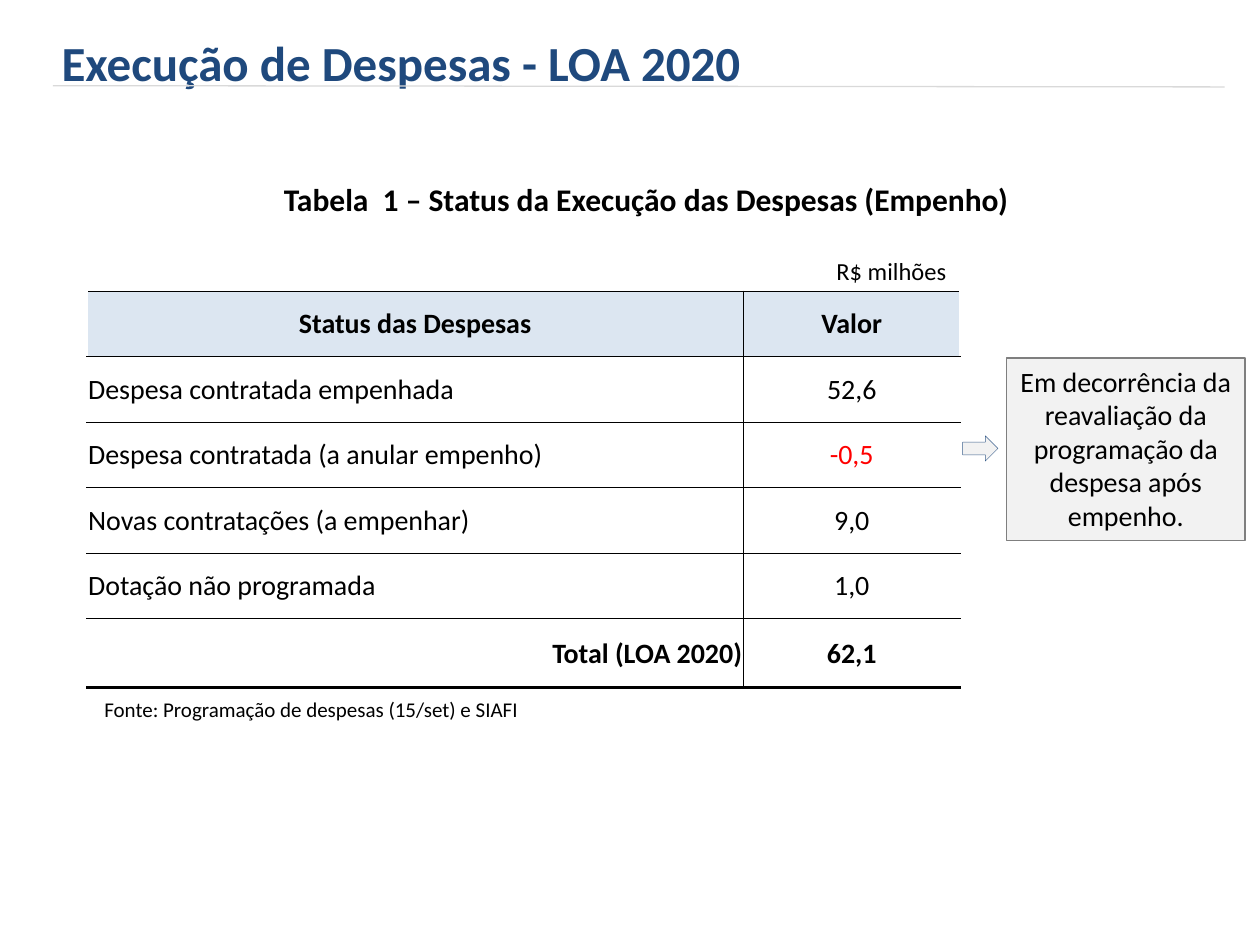
"""Build the slide on the execution of expenses under LOA 2020."""
import pptx
import pptx.dml.color
import pptx.enum.shapes
import pptx.enum.text
import pptx.oxml
import pptx.oxml.ns
import pptx.util
from pptx.util import Inches

COLORS = {
    "title": "1F497D", "text": "000000", "negative": "FF0000",
    "rule": "D9D9D9", "header": "DCE6F1", "body": "FFFFFF",
    "callout": "F2F2F2", "callout_line": "7F7F7F", "arrow_line": "3A5F8C",
}
ALIGN = pptx.enum.text.PP_ALIGN
ANCHOR = pptx.enum.text.MSO_ANCHOR
SHAPE = pptx.enum.shapes.MSO_SHAPE
ROWS = [
    ("Status das Despesas", "Valor"),
    ("Despesa contratada empenhada", "52,6"),
    ("Despesa contratada (a anular empenho)", "-0,5"),
    ("Novas contratações (a empenhar)", "9,0"),
    ("Dotação não programada", "1,0"),
    ("Total (LOA 2020)", "62,1"),
]


def rgb(name):
    return pptx.dml.color.RGBColor.from_string(COLORS[name])


def write(tf, text, size=16, color="text", bold=False, align=ALIGN.LEFT):
    p = tf.paragraphs[0]
    p.alignment = align
    r = p.add_run()
    r.text = text
    r.font.name = "Calibri"
    r.font.size = pptx.util.Pt(size)
    r.font.bold = bold
    r.font.color.rgb = rgb(color)


def add_text(s, box, text, **fmt):
    tf = s.shapes.add_textbox(*map(Inches, box)).text_frame
    tf.word_wrap = True
    write(tf, text, **fmt)


def add_box(s, kind, box, line, width):
    sp = s.shapes.add_shape(kind, *map(Inches, box))
    sp.shadow.inherit = False
    sp.fill.solid()
    sp.fill.fore_color.rgb = rgb("callout")
    sp.line.color.rgb = rgb(line)
    sp.line.width = pptx.util.Pt(width)
    return sp


def add_rule(s, x1, y1, x2, y2):
    kind = pptx.enum.shapes.MSO_CONNECTOR.STRAIGHT
    cx = s.shapes.add_connector(kind, *map(Inches, (x1, y1, x2, y2)))
    cx.line.color.rgb = rgb("rule")
    cx.line.width = pptx.util.Pt(0.75)
    effects = pptx.oxml.parse_xml(f"<a:effectLst {pptx.oxml.ns.nsdecls('a')}/>")
    cx._element.spPr.append(effects)


def set_border(cell, side, width):
    xml = (f'<a:ln{side} {pptx.oxml.ns.nsdecls("a")} w="{pptx.util.Pt(width)}">'
           f'<a:solidFill><a:srgbClr val="{COLORS["text"]}"/></a:solidFill></a:ln{side}>')
    cell._tc.get_or_add_tcPr().append(pptx.oxml.parse_xml(xml))


def format_cell(cell, fill, borders):
    cell.vertical_anchor = ANCHOR.MIDDLE
    cell.margin_left = cell.margin_right = cell.margin_top = Inches(0.01)
    cell.margin_bottom = 0
    for side, width in borders.items():
        set_border(cell, side, width)
    cell.fill.solid()
    cell.fill.fore_color.rgb = rgb(fill)


def add_expense_table(s):
    last = len(ROWS) - 1
    box = map(Inches, (0.69, 2.31, 6.93, 3.15))
    table = s.shapes.add_table(len(ROWS), 2, *box).table
    table.first_row = table.horz_banding = False
    for col, width in zip(table.columns, (5.21, 1.72)):
        col.width = Inches(width)
    for i, values in enumerate(ROWS):
        table.rows[i].height = Inches(0.55 if i == last else 0.52)
        label_align = {0: ALIGN.CENTER, last: ALIGN.RIGHT}.get(i, ALIGN.LEFT)
        for j, text in enumerate(values):
            cell = table.cell(i, j)
            borders = {"L" if j else "R": 0.5, "T": 0.5, "B": 2 if i == last else 0.5}
            format_cell(cell, "body" if i else "header", borders)
            write(cell.text_frame, text, bold=i in (0, last),
                  color="negative" if text.startswith("-") else "text",
                  align=ALIGN.CENTER if j else label_align)


def add_callout(s):
    sp = add_box(s, SHAPE.RECTANGLE, (7.99, 2.84, 1.89, 1.45), "callout_line", 0.75)
    tf = sp.text_frame
    tf.word_wrap = True
    tf.vertical_anchor = ANCHOR.TOP
    write(tf, "Em decorrência da reavaliação da programação da despesa após empenho.",
          align=ALIGN.CENTER)
    add_box(s, SHAPE.RIGHT_ARROW, (7.64, 3.46, 0.28, 0.2), "arrow_line", 0.25)


def main():
    prs = pptx.Presentation()
    prs.slide_width, prs.slide_height = Inches(10), Inches(7.5)
    s = prs.slides.add_slide(prs.slide_layouts[6])
    add_text(s, (0.39, 0.21, 9.49, 0.56), "Execução de Despesas - LOA 2020",
             size=28, color="title", bold=True)
    add_rule(s, 0.42, 0.68, 9.72, 0.69)
    add_expense_table(s)
    add_callout(s)
    add_text(s, (0.73, 5.48, 6.89, 0.3),
             "Fonte: Programação de despesas (15/set) e SIAFI", size=12)
    add_text(s, (1.51, 1.38, 7.24, 0.4),
             "Tabela  1 – Status da Execução das Despesas (Empenho)",
             size=18, bold=True, align=ALIGN.CENTER)
    add_text(s, (6.54, 1.98, 1.1, 0.34), "R$ milhões", size=14)
    prs.save("out.pptx")


if __name__ == "__main__":
    main()
